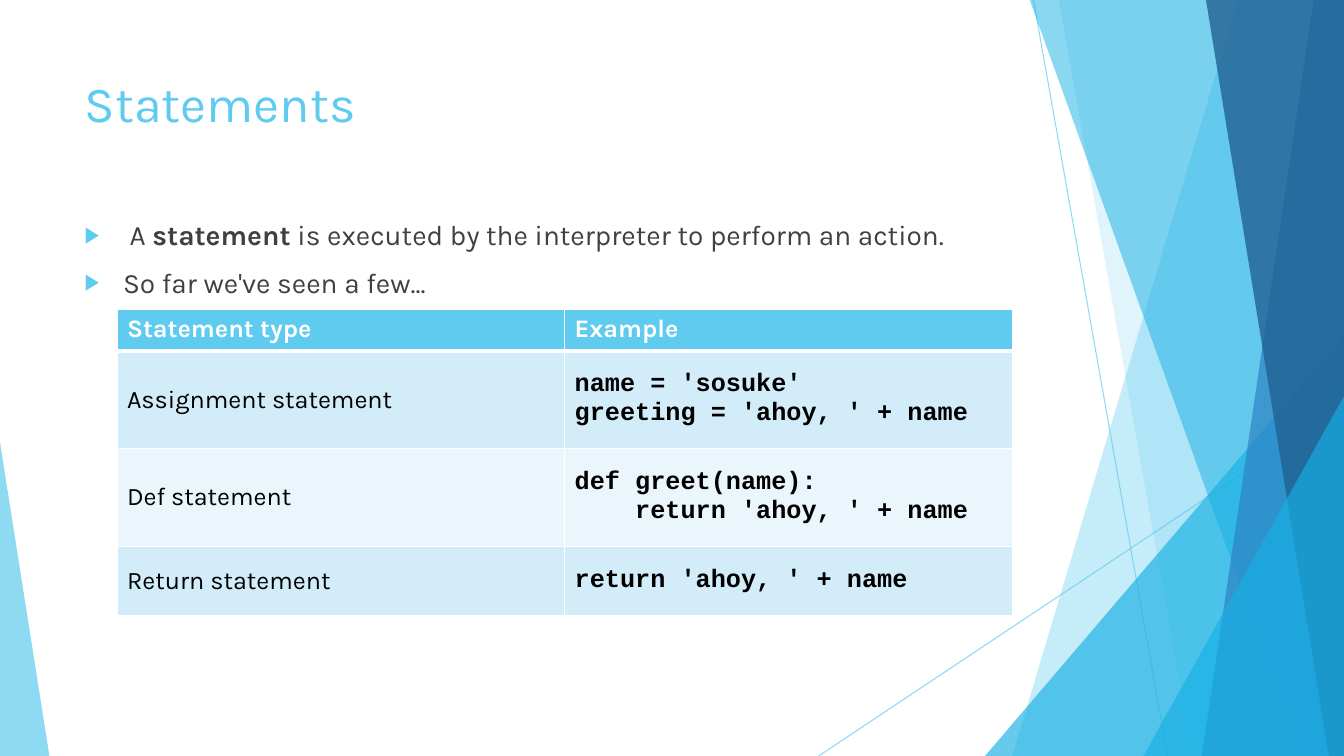
from dataclasses import dataclass

from lxml.etree import SubElement
from pptx import Presentation
from pptx.dml.color import RGBColor
from pptx.enum.shapes import MSO_CONNECTOR, MSO_SHAPE
from pptx.enum.text import MSO_ANCHOR, MSO_AUTO_SIZE, PP_ALIGN
from pptx.oxml import parse_xml
from pptx.oxml.ns import nsdecls, qn
from pptx.util import Inches, Pt


@dataclass(frozen=True)
class Theme:
    sky: str = "5FCBEF"
    cyan: str = "17B0E4"
    blue: str = "2E83C3"
    navy: str = "226292"
    white: str = "FFFFFF"
    black: str = "000000"
    body: str = "404040"
    band_dark: str = "D2ECF9"
    band_light: str = "EAF6FC"
    text_font: str = "Karla"
    code_font: str = "Courier New"
    title_size: int = 36
    body_size: int = 20
    table_size: int = 18


THEME = Theme()
WIDTH, HEIGHT = 13.33, 7.5

RAYS = [((10.25, 0), (11.58, HEIGHT)), ((WIDTH, 4.03), (8.12, HEIGHT))]

# Back to front. Bands: top-left x, bottom-left x. Triangles: apex, left, top, width, height.
BACK_BANDS = [(12.28, 10.04, THEME.sky, 36), (10.5, 11.83, THEME.sky, 20)]
WIDE_TRIANGLE = (1, 9.77, 3.33, 3.56, 4.17, THEME.cyan, 66)
FRONT_BANDS = [
    (10.21, 12.91, THEME.cyan, 50),
    (13.03, 11.92, THEME.blue, 70),
    (11.96, 13.18, THEME.navy, 80),
]
FRONT_TRIANGLES = [
    (1, 11.34, 3.93, 1.99, 3.57, THEME.cyan, 66),
    (0, 0, 4.39, 0.49, 3.11, THEME.sky, 70),
]

BULLETS = [
    [(" A ", False), ("statement", True),
     (" is executed by the interpreter to perform an action.", False)],
    [("So far we've seen a few...", False)],
]
HEADERS = ("Statement type", "Example")
STATEMENTS = [
    ("Assignment statement", "name = 'sosuke'\ngreeting = 'ahoy, ' + name"),
    ("Def statement", "def greet(name):\n    return 'ahoy, ' + name"),
    ("Return statement", "return 'ahoy, ' + name"),
]
ROW_HEIGHTS = (0.41, 0.97, 0.97, 0.68)


def write_text(paragraph, text, *, size, color, font=THEME.text_font, bold=False):
    run = paragraph.add_run()
    run.text = text
    run.font.size = Pt(size)
    run.font.name = font
    run.font.bold = bold
    run.font.color.rgb = RGBColor.from_string(color)


def set_opacity(fill_owner, percent):
    """Add an alpha value to the one solid colour below an element."""
    color = next(fill_owner.iter(qn("a:srgbClr")))
    SubElement(color, qn("a:alpha")).set("val", str(percent * 1000))


def paint(shape, color, opacity):
    shape.shadow.inherit = False
    shape.line.fill.background()
    shape.fill.solid()
    shape.fill.fore_color.rgb = RGBColor.from_string(color)
    set_opacity(shape.element.spPr, opacity)


def add_ray(slide, start, end):
    ray = slide.shapes.add_connector(
        MSO_CONNECTOR.STRAIGHT, *(Inches(value) for value in start + end))
    ray.line.width = Pt(0.75)
    ray.line.color.rgb = RGBColor.from_string(THEME.sky)
    set_opacity(ray.element.spPr, 70)
    SubElement(ray.element.spPr, qn("a:effectLst"))


def add_band(slide, top_x, bottom_x, color, opacity):
    """Fill from a slanted left edge to the right edge of the slide."""
    corners = [(top_x, -0.01), (WIDTH, -0.01), (WIDTH, HEIGHT), (bottom_x, HEIGHT)]
    start, *others = [(Inches(x), Inches(y)) for x, y in corners]
    outline = slide.shapes.build_freeform(*start)
    outline.add_line_segments(others, close=True)
    paint(outline.convert_to_shape(), color, opacity)


def add_triangle(slide, apex, left, top, width, height, color, opacity):
    triangle = slide.shapes.add_shape(
        MSO_SHAPE.ISOSCELES_TRIANGLE,
        Inches(left), Inches(top), Inches(width), Inches(height))
    triangle.adjustments[0] = apex
    paint(triangle, color, opacity)


def add_facets(slide):
    for start, end in RAYS:
        add_ray(slide, start, end)
    for band in BACK_BANDS:
        add_band(slide, *band)
    add_triangle(slide, *WIDE_TRIANGLE)
    for band in FRONT_BANDS:
        add_band(slide, *band)
    for triangle in FRONT_TRIANGLES:
        add_triangle(slide, *triangle)


def place(slide, placeholder, top, height):
    """Position a placeholder in the text column, in front of the facets."""
    placeholder.left, placeholder.top = Inches(0.74), Inches(top)
    placeholder.width, placeholder.height = Inches(9.4), Inches(height)
    slide.shapes.element.append(placeholder.element)
    frame = placeholder.text_frame
    frame.word_wrap = True
    frame.auto_size = MSO_AUTO_SIZE.NONE
    frame.vertical_anchor = MSO_ANCHOR.TOP
    return frame


def add_title(slide, text):
    paragraph = place(slide, slide.shapes.title, 0.67, 1.44).paragraphs[0]
    paragraph.alignment = PP_ALIGN.LEFT
    write_text(paragraph, text, size=THEME.title_size, color=THEME.sky)


def set_bullet(paragraph):
    properties = paragraph._p.get_or_add_pPr()
    properties.set("marL", str(Inches(0.38)))
    properties.set("indent", str(Inches(-0.38)))
    color = SubElement(properties, qn("a:buClr"))
    SubElement(color, qn("a:srgbClr")).set("val", THEME.sky)
    SubElement(properties, qn("a:buSzPct")).set("val", "80000")
    SubElement(properties, qn("a:buChar")).set("char", "▶")


def add_bullets(slide, bullets):
    frame = place(slide, slide.placeholders[1], 2.11, 0.96)
    for index, parts in enumerate(bullets):
        paragraph = frame.add_paragraph() if index else frame.paragraphs[0]
        paragraph.alignment = PP_ALIGN.LEFT
        paragraph.space_before = Pt(10)
        set_bullet(paragraph)
        for text, bold in parts:
            write_text(paragraph, text, size=THEME.body_size, color=THEME.body, bold=bold)


def set_borders(cell, top=1, bottom=1):
    properties = cell._tc.get_or_add_tcPr()
    widths = {"lnL": 1, "lnR": 1, "lnT": top, "lnB": bottom}
    for index, (side, width) in enumerate(widths.items()):
        properties.insert(index, parse_xml(
            f'<a:{side} {nsdecls("a")} w="{Pt(width)}"><a:solidFill>'
            f'<a:srgbClr val="{THEME.white}"/></a:solidFill></a:{side}>'))


def fill_cell(cell, text, fill, **text_format):
    cell.fill.solid()
    cell.fill.fore_color.rgb = RGBColor.from_string(fill)
    for index, line in enumerate(text.split("\n")):
        frame = cell.text_frame
        paragraph = frame.add_paragraph() if index else frame.paragraphs[0]
        write_text(paragraph, line, size=THEME.table_size, **text_format)


def add_statement_table(slide):
    table = slide.shapes.add_table(
        len(ROW_HEIGHTS), len(HEADERS), Inches(1.16), Inches(3.07),
        Inches(8.88), Inches(sum(ROW_HEIGHTS))).table
    for row, height in zip(table.rows, ROW_HEIGHTS):
        row.height = Inches(height)
    for column, header in enumerate(HEADERS):
        cell = table.cell(0, column)
        fill_cell(cell, header, THEME.sky, color=THEME.white, bold=True)
        set_borders(cell, bottom=3)
    for row, (kind, example) in enumerate(STATEMENTS, start=1):
        band = THEME.band_dark if row % 2 else THEME.band_light
        kind_cell, example_cell = table.cell(row, 0), table.cell(row, 1)
        fill_cell(kind_cell, kind, band, color=THEME.black)
        kind_cell.vertical_anchor = MSO_ANCHOR.MIDDLE
        fill_cell(example_cell, example, band, color=THEME.black,
                  font=THEME.code_font, bold=True)
        example_cell.margin_top = example_cell.margin_bottom = Inches(0.2)
        for cell in (kind_cell, example_cell):
            set_borders(cell, top=3 if row == 1 else 1)


def main():
    deck = Presentation()
    deck.slide_width, deck.slide_height = Inches(WIDTH), Inches(HEIGHT)
    slide = deck.slides.add_slide(deck.slide_layouts[1])
    add_facets(slide)
    add_title(slide, "Statements")
    add_bullets(slide, BULLETS)
    add_statement_table(slide)
    deck.save("out.pptx")


if __name__ == "__main__":
    main()
